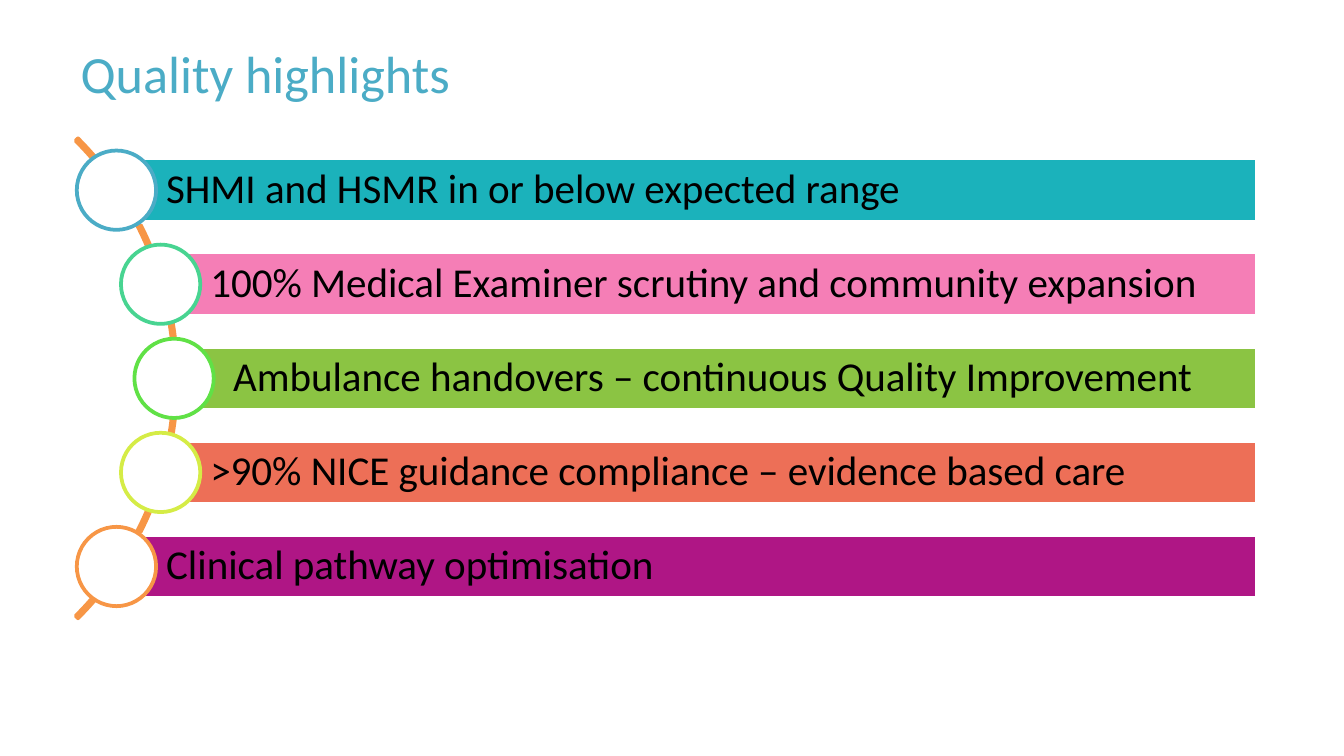
from math import sqrt

from pptx import Presentation
from pptx.dml.color import RGBColor
from pptx.enum.shapes import MSO_SHAPE
from pptx.enum.text import MSO_ANCHOR, PP_ALIGN
from pptx.util import Inches, Pt

ARC, BAR, CIRCLE = MSO_SHAPE.BLOCK_ARC, MSO_SHAPE.RECTANGLE, MSO_SHAPE.OVAL
MIDDLE, LEFT = MSO_ANCHOR.MIDDLE, PP_ALIGN.LEFT

TITLE = "Quality highlights"
HIGHLIGHTS = [
    ("SHMI and HSMR in or below expected range", "1BB2BB", "4BACC6", 0),
    ("100% Medical Examiner scrutiny and community expansion", "F57EB6", "48D491", 0),
    ("Ambulance handovers – continuous Quality Improvement", "8BC443", "60E146", 0.07),
    (">90% NICE guidance compliance – evidence based care", "ED6F57", "D5EC46", 0),
    ("Clinical pathway optimisation", "AF1685", "F79646", 0),
]
THEME = {
    "font": "Calibri", "title": "4BACC6", "text": "000000", "white": "FFFFFF",
    "arc": "F79646", "title_size": 28, "text_size": 22, "line": 2,
}

SLIDE_WIDTH = 10
SLIDE_HEIGHT = SLIDE_WIDTH * 9 / 16
ARC_X, ARC_Y, ARC_SIZE = -3.73, 0.29, 5.05
CENTER_X, CENTER_Y = ARC_X + ARC_SIZE / 2, ARC_Y + ARC_SIZE / 2
TRACK_RADIUS = 2.5
ROW_PITCH = 0.7
BAR_HEIGHT, BAR_RIGHT = 0.47, 9.35
CIRCLE_SIZE = 0.59
TEXT_INSET, EDGE_INSET = 0.37, 0.06


def color(name):
    return RGBColor.from_string(THEME.get(name, name))


def add_figure(slide, preset, box, line, fill=None):
    figure = slide.shapes.add_shape(preset, *map(Inches, box))
    figure.shadow.inherit = False
    if fill:
        figure.fill.solid()
        figure.fill.fore_color.rgb = color(fill)
    else:
        figure.fill.background()
    figure.line.color.rgb = color(line)
    figure.line.width = Pt(THEME["line"])
    return figure


def write(paragraph, text, size, ink):
    paragraph.alignment = LEFT
    run = paragraph.add_run()
    run.text = text
    run.font.name = THEME["font"]
    run.font.size = Pt(THEME[size])
    run.font.color.rgb = color(ink)


def add_highlight(slide, row, text, fill, ring, indent):
    offset = (row - (len(HIGHLIGHTS) - 1) / 2) * ROW_PITCH
    x = CENTER_X + sqrt(TRACK_RADIUS ** 2 - offset ** 2)
    y = CENTER_Y + offset
    bar = add_figure(slide, BAR, (x, y - BAR_HEIGHT / 2, BAR_RIGHT - x, BAR_HEIGHT), "white", fill)
    frame = bar.text_frame
    frame.word_wrap = True
    frame.vertical_anchor = MIDDLE
    frame.margin_left = Inches(TEXT_INSET + indent)
    frame.margin_top = frame.margin_right = frame.margin_bottom = Inches(EDGE_INSET)
    frame.paragraphs[0].line_spacing = 0.9
    write(frame.paragraphs[0], text, "text_size", "text")
    half = CIRCLE_SIZE / 2
    add_figure(slide, CIRCLE, (x - half, y - half, CIRCLE_SIZE, CIRCLE_SIZE), ring, "white")


def main():
    deck = Presentation()
    deck.slide_width, deck.slide_height = Inches(SLIDE_WIDTH), Inches(SLIDE_HEIGHT)
    slide = deck.slides.add_slide(deck.slide_layouts[5])

    title = slide.shapes.title
    title.left, title.top, title.width, title.height = map(Inches, (0.5, 0.07, 9, 0.94))
    title.text_frame.vertical_anchor = MIDDLE
    write(title.text_frame.paragraphs[0], TITLE, "title_size", "title")

    arc = add_figure(slide, ARC, (ARC_X, ARC_Y, ARC_SIZE, ARC_SIZE), "arc")
    for index, value in enumerate((189, 27, 0.005)):
        arc.adjustments[index] = value

    for row, highlight in enumerate(HIGHLIGHTS):
        add_highlight(slide, row, *highlight)

    deck.save("out.pptx")


if __name__ == "__main__":
    main()
